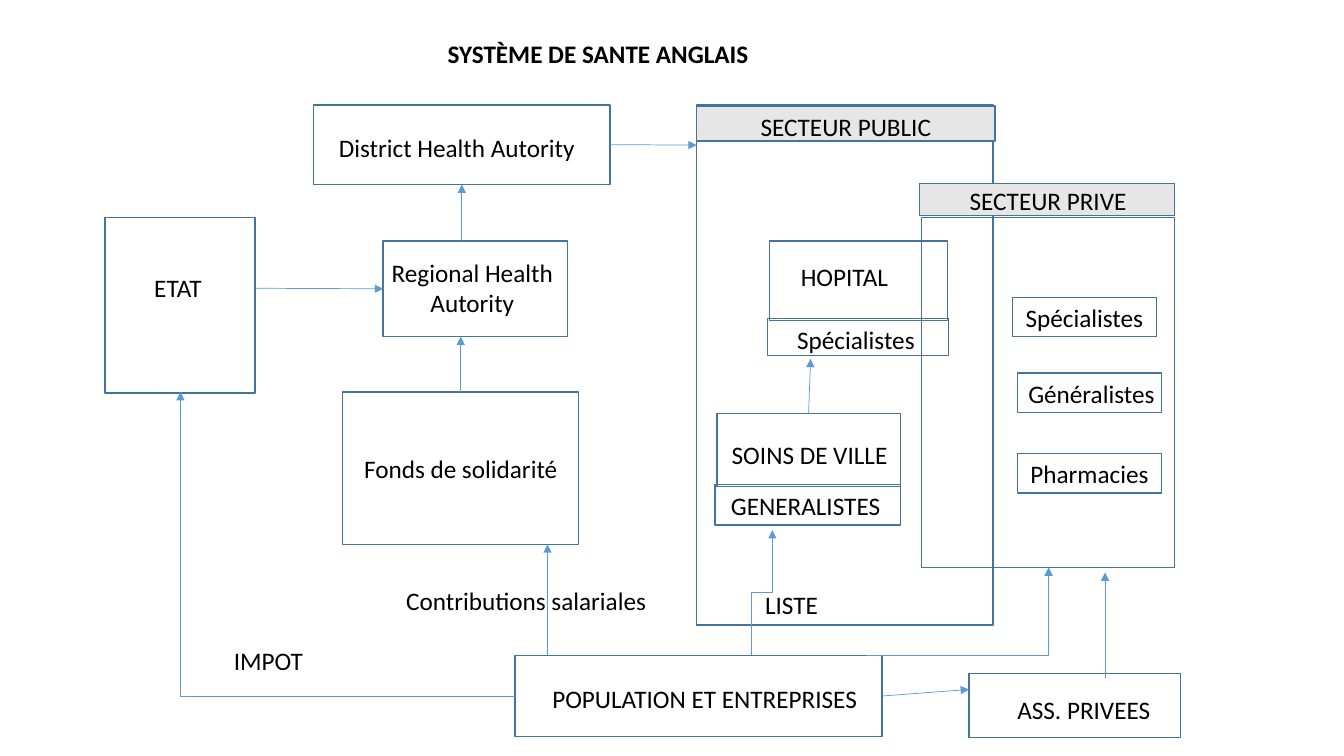
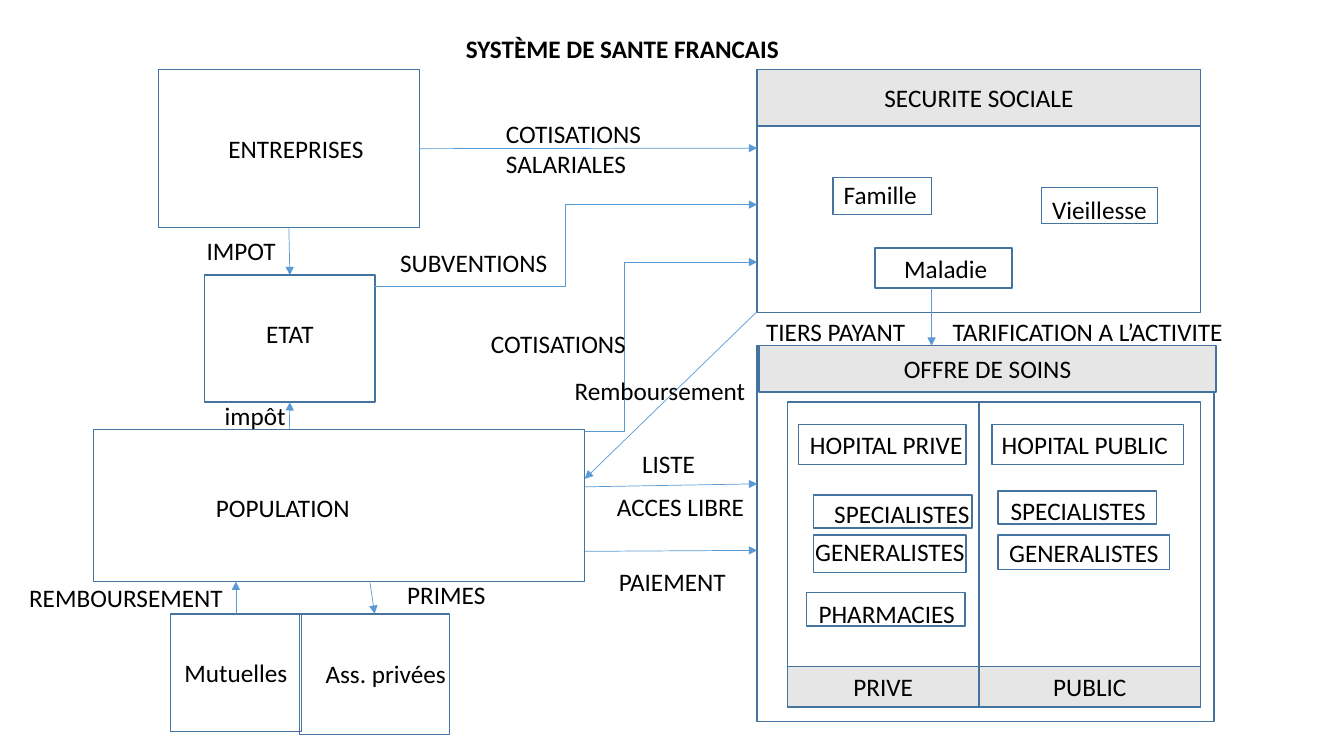
import pptx
import pptx.util
import pptx.dml.color
import pptx.enum.shapes
import pptx.enum.text
import pptx.oxml
import pptx.oxml.ns
from dataclasses import dataclass

Inches, Pt = pptx.util.Inches, pptx.util.Pt
RGB = pptx.dml.color.RGBColor.from_string
LINK = pptx.enum.shapes.MSO_CONNECTOR
RECT = pptx.enum.shapes.MSO_SHAPE.RECTANGLE
ALIGN = pptx.enum.text.PP_ALIGN
ANCHOR = pptx.enum.text.MSO_ANCHOR
FIT = pptx.enum.text.MSO_AUTO_SIZE
TOP, LEFT, BOTTOM, RIGHT = range(4)


@dataclass(frozen=True)
class Theme:
    font: str = "Calibri"
    size: float = 18
    ink: str = "000000"
    edge: str = "43739E"
    arrow: str = "5B9BD5"
    band: str = "E7E6E6"
    edge_width: float = 1
    arrow_width: float = 0.5
    label_height: float = 0.4


THEME = Theme()

# boxes and bands: name: (left, top, width, height, text, shift right, shift down)
# labels: (text, left, top, width)
# arrows: (start, end), each a point or (box, side)
# elbows: (start, end, kind, bend)
ENGLISH = {
    "title": ("SYSTÈME DE SANTE ANGLAIS", 4.34, 0.33, 3.22),
    "boxes": {
        "public": (6.91, 1.04, 2.94, 5.16, "", 0, 0),
        "private": (9.14, 2.16, 2.51, 3.47, "", 0, 0),
        "insurers": (9.61, 6.68, 2.1, 0.64, "ASS. PRIVEES", 0.09, 0.04),
        "hospital": (7.63, 2.39, 1.77, 0.79, "HOPITAL", -0.14, -0.04),
        "hospital staff": (7.61, 3.16, 1.8, 0.37, "Spécialistes", -0.02, 0.02),
        "specialists": (10.04, 2.95, 1.43, 0.39, "Spécialistes", 0, 0),
        "doctors": (10.09, 3.7, 1.43, 0.39, "Généralistes", 0.02, 0.01),
        "chemists": (10.09, 4.5, 1.43, 0.39, "Pharmacies", 0, 0),
        "town care": (7.11, 4.1, 1.82, 0.73, "SOINS DE VILLE", 0.01, 0.04),
        "town staff": (7.09, 4.81, 1.84, 0.4, "GENERALISTES", -0.02, 0),
        "people": (5.11, 6.5, 3.64, 0.81, "POPULATION ET ENTREPRISES", 0.06, 0.02),
        "fund": (3.4, 3.89, 2.34, 1.51, "Fonds de solidarité", 0, 0),
        "region": (3.8, 2.39, 1.83, 0.95, "Regional Health\nAutority", -0.03, -0.01),
        "district": (3.11, 1.04, 2.94, 0.79, "District Health Autority", -0.05, 0.03),
        "state": (1.04, 2.16, 1.49, 1.74, "ETAT", -0.02, -0.18),
    },
    "bands": {
        "public head": (6.91, 1.05, 2.96, 0.35, "SECTEUR PUBLIC", 0, 0.03),
        "private head": (9.12, 1.82, 2.53, 0.32, "SECTEUR PRIVE", 0.01, 0.01),
    },
    "labels": [
        ("IMPOT", 2.22, 6.35, 0.89),
        ("Contributions salariales", 3.93, 5.76, 2.61),
        ("LISTE", 7.49, 5.8, 0.73),
    ],
    "arrows": [
        ((2.54, 2.86), ("region", LEFT)),
        ((4.58, 2.39), ("district", BOTTOM)),
        (("fund", TOP), (4.57, 3.34)),
        ((5.43, 6.5), (5.43, 5.4)),
        ((8.02, 4.1), (8.04, 3.56)),
        ((10.96, 6.73), (10.96, 5.68)),
        (("district", RIGHT), (6.91, 1.44)),
        (("people", RIGHT), (9.61, 6.84)),
    ],
    "elbows": [
        ((5.11, 6.91), (1.79, 3.89), "corner", None),
        ((7.45, 6.5), (7.66, 5.26), "rise", 0.5),
        ((8.59, 6.5), (10.4, 5.63), "corner", None),
    ],
}

FRENCH = {
    "title": ("SYSTÈME DE SANTE FRANCAIS", 4.52, 0.28, 3.34),
    "boxes": {
        "security": (7.51, 0.69, 4.4, 2.41, "", 0, 0),
        "care": (7.51, 3.43, 4.53, 3.73, "", 0, 0),
        "firms": (1.57, 0.69, 2.59, 1.57, "ENTREPRISES", 0.07, 0),
        "state": (2.03, 2.73, 1.69, 1.26, "ETAT", 0, -0.05),
        "people": (0.93, 4.26, 4.87, 1.51, "POPULATION", -0.56, 0.02),
        "mutuals": (1.69, 6.09, 1.3, 1.17, "Mutuelles", 0, 0),
        "insurers": (2.97, 6.09, 1.49, 1.2, "Ass. privées", 0.11, -0.01),
        "private": (7.81, 3.99, 1.9, 3.03, "", 0, 0),
        "public": (9.71, 3.99, 2.2, 3.03, "", 0, 0),
        "illness": (8.68, 2.46, 1.36, 0.4, "Maladie", 0.02, 0),
        "old age": (10.33, 1.86, 1.15, 0.36, "Vieillesse", 0, 0.04),
        "family": (8.26, 1.76, 0.98, 0.37, "Famille", -0.02, -0.02),
        "private hospital": (7.92, 4.21, 1.66, 0.4, "HOPITAL PRIVE", 0.04, 0),
        "public hospital": (9.84, 4.21, 1.9, 0.4, "HOPITAL PUBLIC", -0.03, 0),
        "private specialists": (8.07, 4.91, 1.57, 0.33, "SPECIALISTES", 0.09, 0.02),
        "public specialists": (9.9, 4.87, 1.57, 0.33, "SPECIALISTES", 0.01, 0.03),
        "private doctors": (8.07, 5.31, 1.51, 0.37, "GENERALISTES", 0, -0.02),
        "public doctors": (9.9, 5.31, 1.7, 0.34, "GENERALISTES", 0, 0),
        "chemists": (8, 5.88, 1.57, 0.33, "PHARMACIES", 0.01, 0.04),
    },
    "bands": {
        "security head": (7.51, 0.69, 4.4, 0.56, "SECURITE SOCIALE", 0, 0),
        "care head": (7.53, 3.43, 4.53, 0.46, "OFFRE DE SOINS", 0, 0),
        "private foot": (7.81, 6.61, 1.9, 0.4, "PRIVE", 0, 0),
        "public foot": (9.71, 6.61, 2.2, 0.4, "PUBLIC", 0, 0),
    },
    "labels": [
        ("COTISATIONS\nSALARIALES", 4.92, 1.12, 1.55),
        ("SUBVENTIONS", 3.87, 2.4, 1.67),
        ("ACCES LIBRE", 6.02, 4.83, 1.48),
        ("PAIEMENT", 6.04, 5.57, 1.27),
        ("TIERS PAYANT", 7.5, 3.09, 1.59),
        ("TARIFICATION A L’ACTIVITE", 9.35, 3.09, 3.01),
        ("COTISATIONS", 4.77, 3.21, 1.55),
        ("PRIMES", 3.94, 5.7, 0.98),
        ("REMBOURSEMENT", 0.19, 5.73, 2.14),
        ("Remboursement", 5.6, 3.67, 1.91),
        ("impôt", 2.13, 3.92, 1.19),
        ("IMPOT", 1.95, 2.29, 0.89),
        ("LISTE", 6.27, 4.4, 0.73),
    ],
    "arrows": [
        (("mutuals", TOP), (2.34, 5.77)),
        ((3.67, 5.78), ("insurers", TOP)),
        ((2.87, 4.26), ("state", BOTTOM)),
        (("firms", BOTTOM), ("state", TOP)),
        (("firms", RIGHT), (7.51, 1.47)),
        ((5.8, 4.83), (7.51, 4.8)),
        ((5.8, 5.47), (7.51, 5.46)),
        ((9.24, 2.86), (9.24, 3.43)),
        ((7.51, 3.09), (5.8, 4.75)),
    ],
    "elbows": [
        ((3.71, 2.84), (7.51, 2.03), "step", 0.5),
        ((5.8, 4.28), (7.51, 2.6), "step", 0.23),
    ],
}


def write(frame, text, align=ALIGN.LEFT, bold=False, anchor=ANCHOR.TOP,
          wrap=False, insets=(0.1, 0.05, 0.1, 0.05)):
    frame.auto_size = FIT.NONE
    frame.word_wrap = wrap
    frame.vertical_anchor = anchor
    (frame.margin_left, frame.margin_top,
     frame.margin_right, frame.margin_bottom) = map(Inches, insets)
    frame.text = text
    for para in frame.paragraphs:
        para.alignment = align
        para.line_spacing = 1.0
        for run in para.runs:
            font = run.font
            font.name, font.size, font.bold = THEME.font, Pt(THEME.size), bold
            font.color.rgb = RGB(THEME.ink)


def add_box(slide, place, fill=None):
    *area, text, right, down = place
    box = slide.shapes.add_shape(RECT, *map(Inches, area))
    box.shadow.inherit = False
    if fill:
        box.fill.solid()
        box.fill.fore_color.rgb = RGB(fill)
    else:
        box.fill.background()
    box.line.color.rgb = RGB(THEME.edge)
    box.line.width = Pt(THEME.edge_width)
    if text:
        shift = (right, down, -right, -down)
        write(box.text_frame, text, align=ALIGN.CENTER, anchor=ANCHOR.MIDDLE,
              wrap=True, insets=[max(0, 2 * part) for part in shift])
    return box


def add_label(slide, text, left, top, width):
    height = THEME.label_height + 0.31 * text.count("\n")
    label = slide.shapes.add_textbox(*map(Inches, (left, top, width, height)))
    write(label.text_frame, text)


def add_link(slide, kind, start, end):
    link = slide.shapes.add_connector(kind, *map(Inches, (*start, *end)))
    link.line.color.rgb = RGB(THEME.arrow)
    link.line.width = Pt(THEME.arrow_width)
    line = link.line._get_or_add_ln()
    pptx.oxml.ns.qn("a:tailEnd")
    tail = line.makeelement(pptx.oxml.ns.qn("a:tailEnd"), {"type": "triangle"})
    line.append(tail)
    props = link._element.spPr
    props.append(props.makeelement(pptx.oxml.ns.qn("a:effectLst"), {}))
    return link


def locate(end, boxes):
    """Give the point for an arrow's end."""
    if not isinstance(end[0], str):
        return end
    x, y, w, h = boxes[end[0]][:4]
    return [(x + w / 2, y), (x, y + h / 2),
            (x + w / 2, y + h), (x + w, y + h / 2)][end[1]]


def add_arrow(slide, start, end, boxes, shapes):
    link = add_link(slide, LINK.STRAIGHT, locate(start, boxes), locate(end, boxes))
    for spot, join in ((start, link.begin_connect), (end, link.end_connect)):
        if isinstance(spot[0], str):
            join(shapes[spot[0]], spot[1])


def add_elbow(slide, start, end, kind, bend):
    """Draw a corner (one turn), a step (two turns) or a rise (a step that starts upright)."""
    if kind == "rise":
        mid_x, mid_y = (start[0] + end[0]) / 2, (start[1] + end[1]) / 2
        start, end = [(mid_x + y - mid_y, mid_y - x + mid_x) for x, y in (start, end)]
    link = add_link(slide, LINK.ELBOW, start, end)
    props = link._element.spPr
    shape = props.find(pptx.oxml.ns.qn("a:prstGeom"))
    if kind == "rise":
        props.find(pptx.oxml.ns.qn("a:xfrm")).set("rot", str(90 * 60000))
    if kind == "corner":
        shape.set("prst", "bentConnector2")
    else:
        guides = shape.find(pptx.oxml.ns.qn("a:avLst"))
        if guides is None:
            guides = shape.makeelement(pptx.oxml.ns.qn("a:avLst"), {})
            shape.append(guides)
        guides.append(guides.makeelement(pptx.oxml.ns.qn("a:gd"), {
            "name": "adj1", "fmla": f"val {round(bend * 100000)}"}))


def add_chart(deck, chart):
    """Add a slide that holds one flow chart."""
    slide = deck.slides.add_slide(deck.slide_layouts[5])
    text, left, top, width = chart["title"]
    title = slide.shapes.title
    title.left, title.top, title.width, title.height = map(
        Inches, (left, top, width, THEME.label_height))
    write(title.text_frame, text, bold=True)
    boxes = chart["boxes"]
    shapes = {name: add_box(slide, place) for name, place in boxes.items()}
    for place in chart["bands"].values():
        add_box(slide, place, fill=THEME.band)
    for start, end in chart["arrows"]:
        add_arrow(slide, start, end, boxes, shapes)
    for elbow in chart["elbows"]:
        add_elbow(slide, *elbow)
    for label in chart["labels"]:
        add_label(slide, *label)


def main():
    deck = pptx.Presentation()
    deck.slide_width, deck.slide_height = Inches(13.33), Inches(7.5)
    for chart in (ENGLISH, FRENCH):
        add_chart(deck, chart)
    deck.save("out.pptx")


if __name__ == "__main__":
    main()
